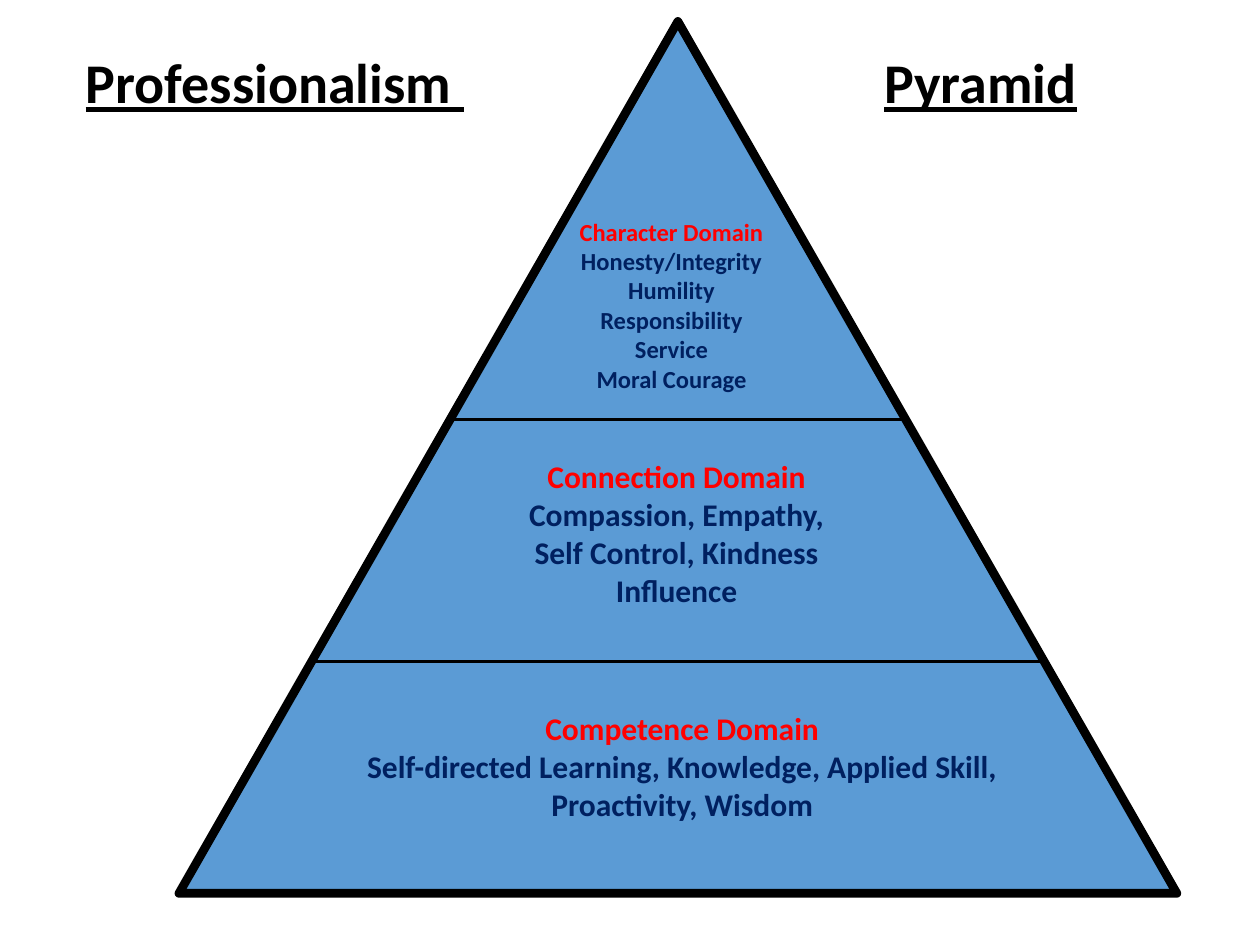
"""Build the Professionalism Pyramid slide."""
from lxml.etree import SubElement
from pptx import Presentation
from pptx.dml.color import RGBColor
from pptx.enum.shapes import MSO_CONNECTOR, MSO_SHAPE
from pptx.enum.text import MSO_ANCHOR, MSO_AUTO_SIZE, PP_ALIGN
from pptx.oxml.ns import qn
from pptx.util import Inches, Pt

HUES = {"ink": "000000", "blue": "5B9BD5", "red": "FF0000", "navy": "002060"}


def hue(name):
    return RGBColor.from_string(HUES[name])


def place(shape, left, top, width, height):
    shape.left, shape.top = Inches(left), Inches(top)
    shape.width, shape.height = Inches(width), Inches(height)


def write(shape, lines, size, head="ink", body="ink", align=PP_ALIGN.LEFT,
          under=False, wrap=True):
    frame = shape.text_frame
    frame.text = "\n".join(lines)
    frame.word_wrap = wrap
    frame.vertical_anchor = MSO_ANCHOR.TOP
    frame.auto_size = MSO_AUTO_SIZE.SHAPE_TO_FIT_TEXT
    for row, para in enumerate(frame.paragraphs):
        para.alignment = align
        para.line_spacing = 1.0
        para.space_before = Pt(0)
        font = para.runs[0].font
        font.name, font.size, font.bold = "Calibri", Pt(size), True
        font.underline = under
        font.color.rgb = hue(body if row else head)


def add_text(slide, box, lines, size, **style):
    shape = slide.shapes.add_textbox(*map(Inches, box))
    write(shape, lines, size, **style)


def add_peak(slide, box):
    peak = slide.shapes.add_shape(MSO_SHAPE.ISOSCELES_TRIANGLE, *map(Inches, box))
    peak.shadow.inherit = False
    peak.fill.solid()
    peak.fill.fore_color.rgb = hue("blue")
    peak.line.color.rgb = hue("ink")
    peak.line.width = Pt(5)


def add_rule(slide, left, right, top):
    rule = slide.shapes.add_connector(
        MSO_CONNECTOR.STRAIGHT, Inches(left), Inches(top), Inches(right), Inches(top))
    rule.line.color.rgb = hue("ink")
    rule.line.width = Pt(1.5)
    SubElement(rule._element.spPr, qn("a:effectLst"))


def add_tier(slide, box, lines, size):
    add_text(slide, box, lines, size, head="red", body="navy", align=PP_ALIGN.CENTER)


def main():
    deck = Presentation()
    deck.slide_width, deck.slide_height = Inches(10), Inches(7.5)
    slide = deck.slides.add_slide(deck.slide_layouts[5])
    title = slide.shapes.title
    place(title, 0.58, 0.33, 3.31, 0.64)
    write(title, ["Professionalism "], 32, under=True, wrap=False)
    add_text(slide, (6.92, 0.33, 1.74, 0.64), ["Pyramid"], 32, under=True, wrap=False)

    add_peak(slide, (1.42, 0.17, 7.92, 6.92))
    add_rule(slide, 2.5, 8.25, 5.25)
    add_rule(slide, 3.58, 7.17, 3.33)

    add_tier(slide, (2.58, 5.58, 5.67, 1.3), [
        "Competence Domain",
        "Self-directed Learning, Knowledge, Applied Skill, Proactivity, Wisdom"], 18)
    add_tier(slide, (3.58, 3.58, 3.58, 1.6), [
        "Connection Domain", "Compassion, Empathy,", "Self Control, Kindness",
        "Influence"], 18)
    add_tier(slide, (4.33, 1.67, 2, 1.85), [
        "Character Domain", "Honesty/Integrity", "Humility", "Responsibility",
        "Service", "Moral Courage"], 14)
    deck.save("out.pptx")


if __name__ == "__main__":
    main()
